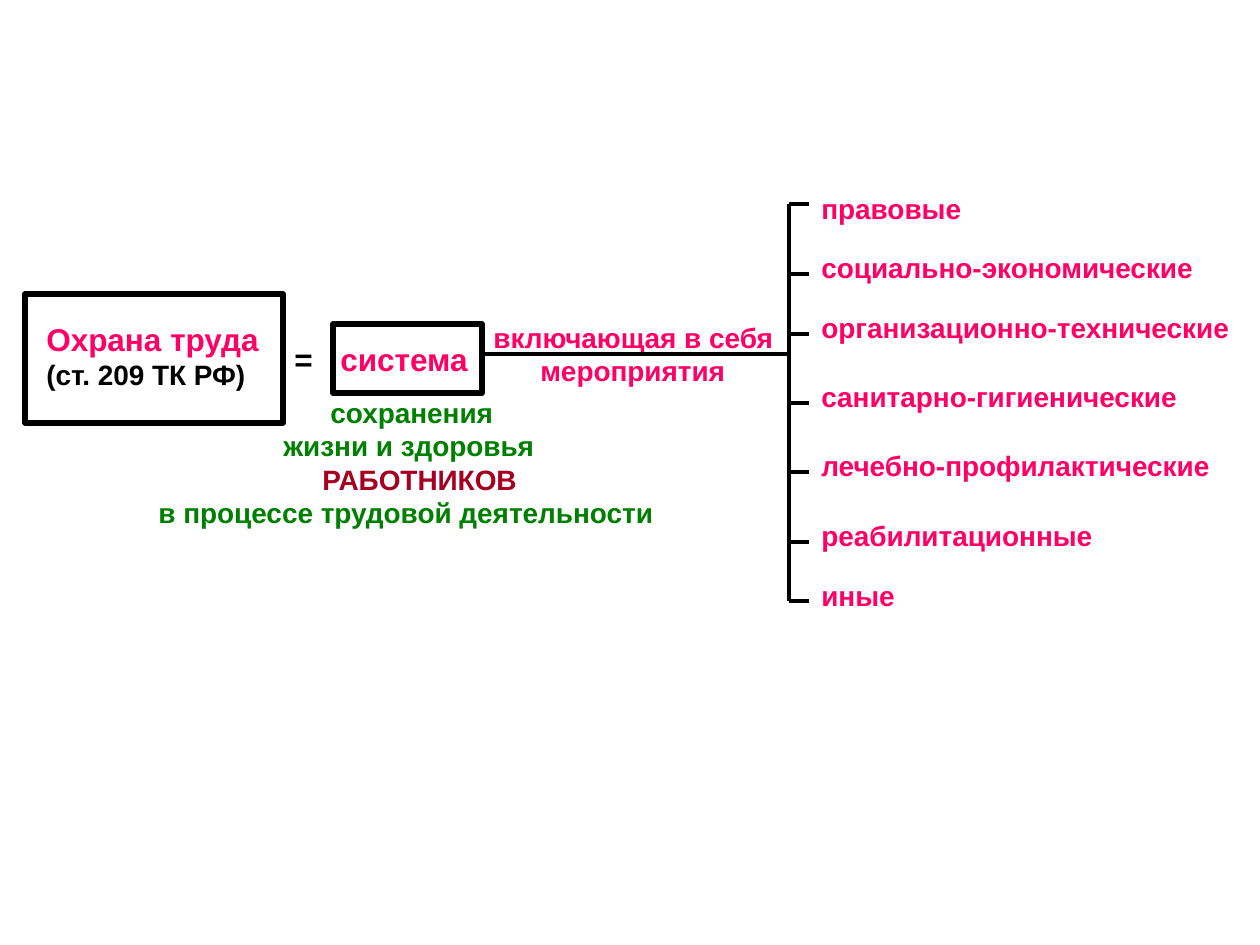
import pptx
import pptx.dml.color
import pptx.enum.shapes
import pptx.util
from dataclasses import dataclass
from lxml import etree

SCALE = 914400 / 126
PINK, BLACK, GREEN, RED = "FF0066", "000000", "008000", "A50021"
SPINE = 789
TICK = 20


@dataclass
class Item:
    text: str
    tick: int
    top: int


@dataclass
class Line:
    text: str
    color: str = PINK
    size: int = 16
    indent: int = 0


ITEMS = [
    Item("правовые", 204, 185),
    Item("социально-экономические", 274, 244),
    Item("организационно-технические", 334, 304),
    Item("санитарно-гигиенические", 403, 373),
    Item("лечебно-профилактические", 472, 442),
    Item("реабилитационные", 542, 512),
    Item("иные", 601, 572),
]


def px(n: int) -> int:
    return round(n * SCALE)


def paint(hue: str) -> pptx.dml.color.RGBColor:
    return pptx.dml.color.RGBColor.from_string(hue)


def write(slide, lines: list[Line], *, left: int, top: int, width: int,
          height: int, font: str = "Arial", bold: bool = True) -> None:
    box = slide.shapes.add_textbox(px(left), px(top), px(width), px(height))
    frame = box.text_frame
    frame.word_wrap = True
    for i, line in enumerate(lines):
        para = frame.add_paragraph() if i else frame.paragraphs[0]
        if line.indent:
            para._p.get_or_add_pPr().set("marL", str(px(line.indent)))
        run = para.add_run()
        run.text = line.text
        run.font.name = font
        run.font.size = pptx.util.Pt(line.size)
        run.font.bold = bold
        run.font.color.rgb = paint(line.color)


def frame_box(slide, left: int, top: int, width: int, height: int) -> None:
    box = slide.shapes.add_shape(pptx.enum.shapes.MSO_SHAPE.RECTANGLE,
                                 px(left), px(top), px(width), px(height))
    box.shadow.inherit = False
    box.fill.background()
    box.line.color.rgb = paint(BLACK)
    box.line.width = pptx.util.Pt(3)


def rule(slide, x1: int, y1: int, x2: int, y2: int) -> None:
    line = slide.shapes.add_connector(pptx.enum.shapes.MSO_CONNECTOR.STRAIGHT,
                                      px(x1), px(y1), px(x2), px(y2))
    line.line.color.rgb = paint(BLACK)
    line.line.width = pptx.util.Pt(2.25)
    etree.SubElement(line._element.spPr, pptx.oxml.ns.qn("a:effectLst"))


def main() -> None:
    deck = pptx.Presentation()
    deck.slide_width, deck.slide_height = px(1260), px(945)
    slide = deck.slides.add_slide(deck.slide_layouts[6])

    frame_box(slide, 25, 294, 258, 129)
    write(slide, [Line("Охрана труда", size=18),
                  Line("(ст. 209 ТК РФ)", BLACK)],
          left=34, top=314, width=312, height=84)
    write(slide, [Line("=", BLACK, 18)],
          left=282, top=334, width=59, height=50)

    frame_box(slide, 333, 324, 149, 69)
    write(slide, [Line("система", size=18, indent=26)],
          left=302, top=334, width=668, height=50)
    write(slide, [Line("сохранения", GREEN, indent=195),
                  Line("жизни и здоровья", GREEN, indent=148),
                  Line("РАБОТНИКОВ", RED, indent=187),
                  Line("в процессе трудовой деятельности", GREEN, indent=23)],
          left=123, top=389, width=696, height=147)

    write(slide, [Line("включающая в себя"),
                  Line("мероприятия", indent=47)],
          left=481, top=314, width=588, height=81)
    rule(slide, 481, 354, SPINE, 354)
    rule(slide, SPINE, ITEMS[0].tick, SPINE, ITEMS[-1].tick)
    for item in ITEMS:
        rule(slide, SPINE, item.tick, SPINE + TICK, item.tick)
        write(slide, [Line(item.text)],
              left=SPINE + TICK, top=item.top, width=451, height=47)

    deck.save("out.pptx")


if __name__ == "__main__":
    main()
